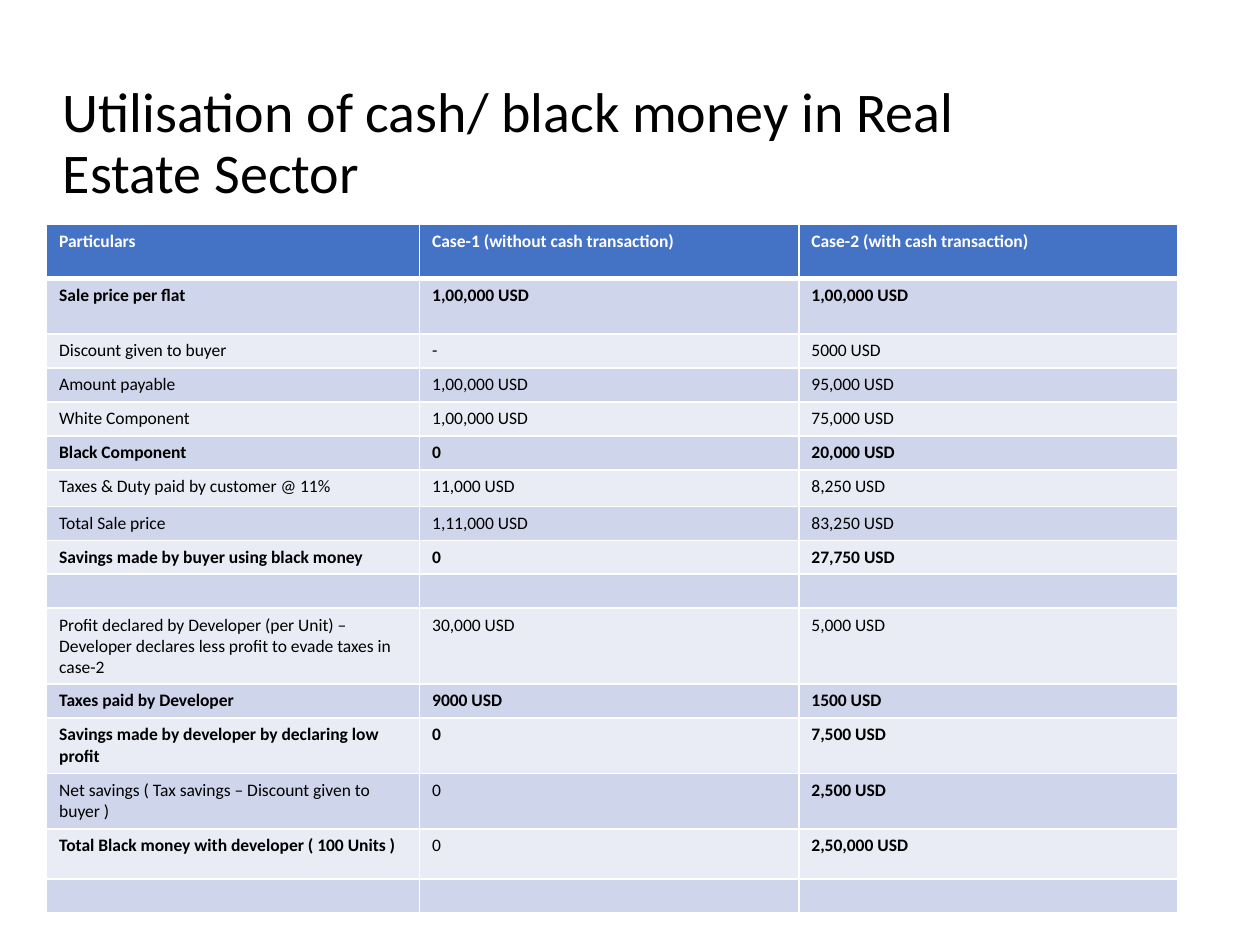
import lxml.etree
import pptx
import pptx.dml.color
import pptx.enum.text
import pptx.oxml.ns
import pptx.util

Inches = pptx.util.Inches
Pt = pptx.util.Pt
RGBColor = pptx.dml.color.RGBColor
qn = pptx.oxml.ns.qn

BLACK = RGBColor(0x00, 0x00, 0x00)
WHITE = RGBColor(0xFF, 0xFF, 0xFF)
HEADER_BLUE = RGBColor(0x44, 0x72, 0xC4)
BAND_DARK = RGBColor(0xCF, 0xD5, 0xEA)
BAND_LIGHT = RGBColor(0xE9, 0xEB, 0xF5)

TITLE = "Utilisation of cash/ black money in Real Estate Sector"
COLUMN_WIDTHS = (2.96, 3.01, 3.01)
ONE_LINE, TWO_LINES, THREE_LINES = 0.27, 0.44, 0.6

PLAIN = (False, False, False)
BOLD = (True, True, True)

# Row height, bold flag of each column, cell texts
ROWS = [
    (0.43, BOLD, ("Particulars", "Case-1 (without cash transaction)",
                  "Case-2 (with cash transaction)")),
    (TWO_LINES, BOLD, ("Sale price per flat", "1,00,000 USD", "1,00,000 USD")),
    (ONE_LINE, PLAIN, ("Discount given to buyer", "-", "5000 USD")),
    (ONE_LINE, PLAIN, ("Amount payable", "1,00,000 USD", "95,000 USD")),
    (ONE_LINE, PLAIN, ("White Component", "1,00,000 USD", "75,000 USD")),
    (ONE_LINE, BOLD, ("Black Component", "0", "20,000 USD")),
    (0.29, PLAIN, ("Taxes & Duty paid by customer @ 11%", "11,000 USD", "8,250 USD")),
    (ONE_LINE, PLAIN, ("Total Sale price", "1,11,000 USD", "83,250 USD")),
    (ONE_LINE, BOLD, ("Savings made by buyer using black money", "0", "27,750 USD")),
    (ONE_LINE, PLAIN, ("", "", "")),
    (THREE_LINES, PLAIN, ("Profit declared by Developer (per Unit) – Developer declares "
                          "less profit to evade taxes in case-2",
                          "30,000 USD", "5,000 USD")),
    (ONE_LINE, BOLD, ("Taxes paid by Developer", "9000 USD", "1500 USD")),
    (TWO_LINES, BOLD, ("Savings made by developer by declaring low profit",
                       "0", "7,500 USD")),
    (TWO_LINES, (False, False, True),
     ("Net savings ( Tax savings – Discount given to buyer )", "0", "2,500 USD")),
    (0.4, (True, False, True),
     ("Total Black money with developer ( 100 Units )", "0", "2,50,000 USD")),
    (ONE_LINE, PLAIN, ("", "", "")),
]


class SlideBuilder:
    """Holds the text style and the slide being built."""

    def __init__(self, slide, font_name="Calibri", title_size=32, table_size=10):
        self.slide = slide
        self.font_name = font_name
        self.title_size = title_size
        self.table_size = table_size

    def format_runs(self, paragraph, size, color, bold=False):
        for run in paragraph.runs:
            run.font.name = self.font_name
            run.font.size = Pt(size)
            run.font.bold = bold
            run.font.color.rgb = color

    def add_title(self, text, left, top, width, height):
        shape = self.slide.shapes.add_textbox(
            Inches(left), Inches(top), Inches(width), Inches(height))
        text_frame = shape.text_frame
        text_frame.word_wrap = True
        text_frame.vertical_anchor = pptx.enum.text.MSO_ANCHOR.MIDDLE
        text_frame.text = text
        paragraph = text_frame.paragraphs[0]
        paragraph.line_spacing = 0.9
        self.format_runs(paragraph, self.title_size, BLACK)

    def add_table(self, rows, column_widths, left, top):
        heights = [height for height, _, _ in rows]
        table = self.slide.shapes.add_table(
            len(rows), len(column_widths), Inches(left), Inches(top),
            Inches(sum(column_widths)), Inches(sum(heights))).table
        for column, width in zip(table.columns, column_widths):
            column.width = Inches(width)
        for row_index, (height, bold_flags, texts) in enumerate(rows):
            table.rows[row_index].height = Inches(height)
            for column_index, (text, bold) in enumerate(zip(texts, bold_flags)):
                self.fill_cell(table.cell(row_index, column_index), row_index, text, bold)

    def fill_cell(self, cell, row_index, text, bold):
        is_header = row_index == 0
        self.add_borders(cell, top=3 if row_index == 1 else 1, bottom=3 if is_header else 1)
        cell.fill.solid()
        band = BAND_DARK if row_index % 2 else BAND_LIGHT
        cell.fill.fore_color.rgb = HEADER_BLUE if is_header else band
        cell.text_frame.text = text
        paragraph = cell.text_frame.paragraphs[0]
        self.format_runs(paragraph, self.table_size, WHITE if is_header else BLACK, bold)
        if not text:
            # An empty cell takes its line height from the end-of-paragraph size
            lxml.etree.SubElement(
                paragraph._p, qn("a:endParaRPr"), sz=str(self.table_size * 100))

    def add_borders(self, cell, top, bottom):
        properties = cell._tc.get_or_add_tcPr()
        for side, width in (("L", 1), ("R", 1), ("T", top), ("B", bottom)):
            line = lxml.etree.SubElement(properties, qn(f"a:ln{side}"), w=str(Pt(width)))
            fill = lxml.etree.SubElement(line, qn("a:solidFill"))
            lxml.etree.SubElement(fill, qn("a:srgbClr"), val=str(WHITE))


def main():
    presentation = pptx.Presentation()
    presentation.slide_width = Inches(10)
    presentation.slide_height = Inches(7.5)
    slide = presentation.slides.add_slide(presentation.slide_layouts[6])
    builder = SlideBuilder(slide)
    builder.add_title(TITLE, 0.4, 0.52, 8, 1.26)
    builder.add_table(ROWS, COLUMN_WIDTHS, 0.37, 1.78)
    presentation.save("out.pptx")


if __name__ == "__main__":
    main()
